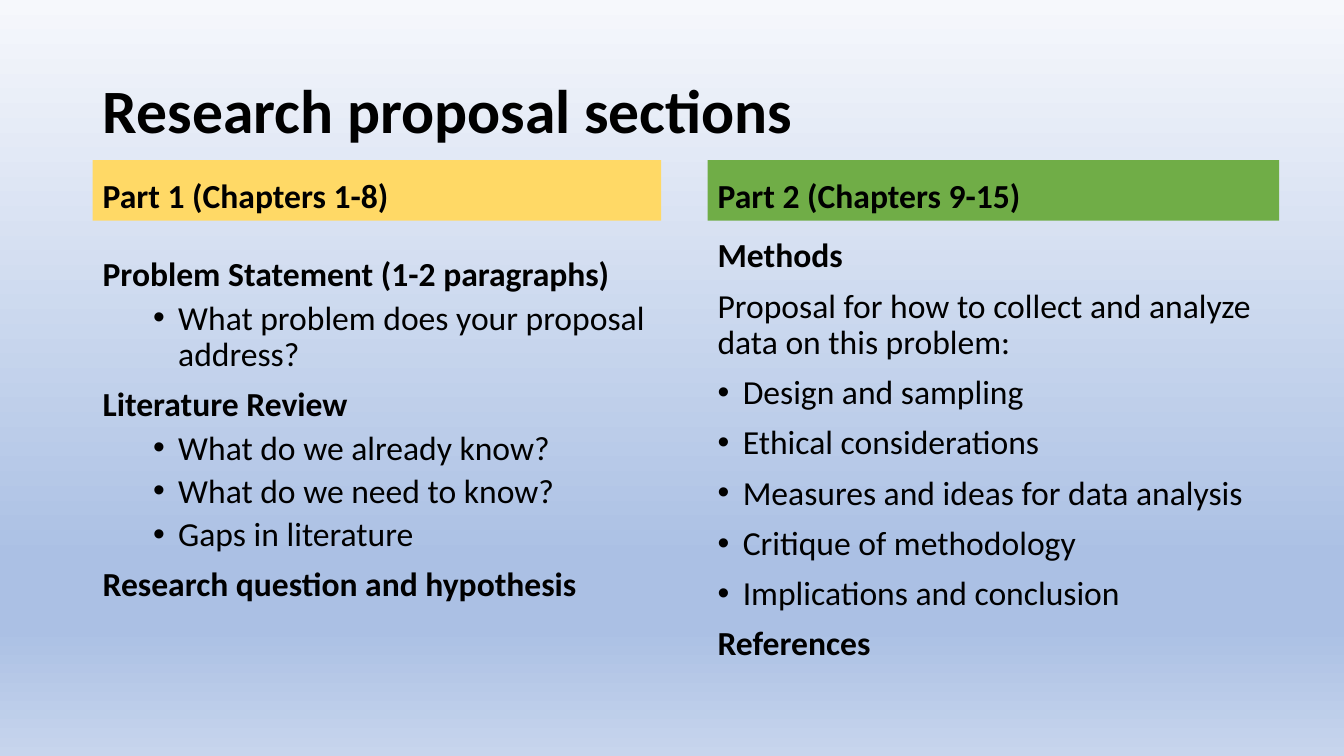
from dataclasses import dataclass

from lxml.etree import SubElement
from pptx import Presentation
from pptx.dml.color import RGBColor
from pptx.enum.shapes import MSO_SHAPE
from pptx.enum.text import MSO_ANCHOR, MSO_AUTO_SIZE, PP_ALIGN
from pptx.oxml.ns import qn
from pptx.util import Pt


@dataclass(frozen=True)
class Theme:
    font: str = "Calibri"
    title_size: int = 44
    body_size: int = 24
    text: str = "000000"
    part1: str = "FFD966"
    part2: str = "70AD47"
    sky: tuple = ((0, "F6F8FC"), (74, "ABC0E4"), (83, "ABC0E4"), (100, "C7D5ED"))


THEME = Theme()

# Paragraph styles: (bold, left indent, space before, bulleted)
HEAD = (True, 0, 10, False)
PLAIN = (False, 0, 10, False)
BULLET = (False, 18, 10, True)
SUB = (False, 54, 5, True)
HANGING = 18

PART1 = [
    ("Problem Statement (1-2 paragraphs)", HEAD),
    ("What problem does your proposal address?", SUB),
    ("Literature Review", HEAD),
    ("What do we already know?", SUB),
    ("What do we need to know?", SUB),
    ("Gaps in literature", SUB),
    ("Research question and hypothesis", HEAD),
]
PART2 = [
    ("Methods", HEAD),
    ("Proposal for how to collect and analyze data on this problem:", PLAIN),
    ("Design and sampling", BULLET),
    ("Ethical considerations", BULLET),
    ("Measures and ideas for data analysis", BULLET),
    ("Critique of methodology", BULLET),
    ("Implications and conclusion", BULLET),
    ("References", HEAD),
]


def paint_background(s):
    fill = s.background.fill
    fill.gradient()
    fill.gradient_angle = 270
    stops = next(s._element.iter(qn("a:gsLst")))
    for stop in list(stops):
        stops.remove(stop)
    for percent, color in THEME.sky:
        stop = SubElement(stops, qn("a:gs"), pos=str(percent * 1000))
        SubElement(stop, qn("a:srgbClr"), val=color)


def add_run(p, text, size, bold):
    r = p.add_run()
    r.text = text
    r.font.name = THEME.font
    r.font.size = Pt(size)
    r.font.bold = bold
    r.font.color.rgb = RGBColor.from_string(THEME.text)


def set_frame(tf, anchor):
    tf.word_wrap = True
    tf.auto_size = MSO_AUTO_SIZE.NONE
    tf.vertical_anchor = anchor


def format_paragraph(p, indent=0, before=0, bulleted=False):
    p.alignment = PP_ALIGN.LEFT
    p.line_spacing = 0.9
    p.space_before = Pt(before)
    if bulleted:
        pPr = p._p.get_or_add_pPr()
        pPr.set("marL", str(Pt(indent)))
        pPr.set("indent", str(-Pt(HANGING)))
        SubElement(pPr, qn("a:buFont"), typeface="Arial")
        SubElement(pPr, qn("a:buChar"), char="•")


def set_title(s, text, left, top, width, height):
    sp = s.shapes.title
    sp.left, sp.top, sp.width, sp.height = Pt(left), Pt(top), Pt(width), Pt(height)
    set_frame(sp.text_frame, MSO_ANCHOR.MIDDLE)
    p = sp.text_frame.paragraphs[0]
    format_paragraph(p)
    add_run(p, text, THEME.title_size, True)


def add_banner(s, text, color, left, top, width, height):
    sp = s.shapes.add_shape(MSO_SHAPE.RECTANGLE, Pt(left), Pt(top), Pt(width), Pt(height))
    sp.shadow.inherit = False
    sp.fill.solid()
    sp.fill.fore_color.rgb = RGBColor.from_string(color)
    sp.line.fill.background()
    set_frame(sp.text_frame, MSO_ANCHOR.BOTTOM)
    p = sp.text_frame.paragraphs[0]
    format_paragraph(p, before=10)
    add_run(p, text, THEME.body_size, True)


def add_outline(s, items, left, top, width, height):
    tf = s.shapes.add_textbox(Pt(left), Pt(top), Pt(width), Pt(height)).text_frame
    set_frame(tf, MSO_ANCHOR.TOP)
    for i, (text, (bold, indent, before, bulleted)) in enumerate(items):
        p = tf.add_paragraph() if i else tf.paragraphs[0]
        format_paragraph(p, indent, before, bulleted)
        add_run(p, text, THEME.body_size, bold)


def main():
    prs = Presentation()
    prs.slide_width, prs.slide_height = Pt(960), Pt(540)
    s = prs.slides.add_slide(prs.slide_layouts[5])
    paint_background(s)
    set_title(s, "Research proposal sections", 66.25, 28.75, 828, 104.4)

    # Left column
    add_banner(s, "Part 1 (Chapters 1-8)", THEME.part1, 66.25, 114.5, 406.1, 43.2)
    add_outline(s, PART1, 66.25, 180.7, 406.1, 285.8)

    # Right column
    add_banner(s, "Part 2 (Chapters 9-15)", THEME.part2, 505.5, 114.5, 408.2, 43.2)
    add_outline(s, PART2, 505.5, 167, 406.1, 326.2)

    prs.save("out.pptx")


if __name__ == "__main__":
    main()
